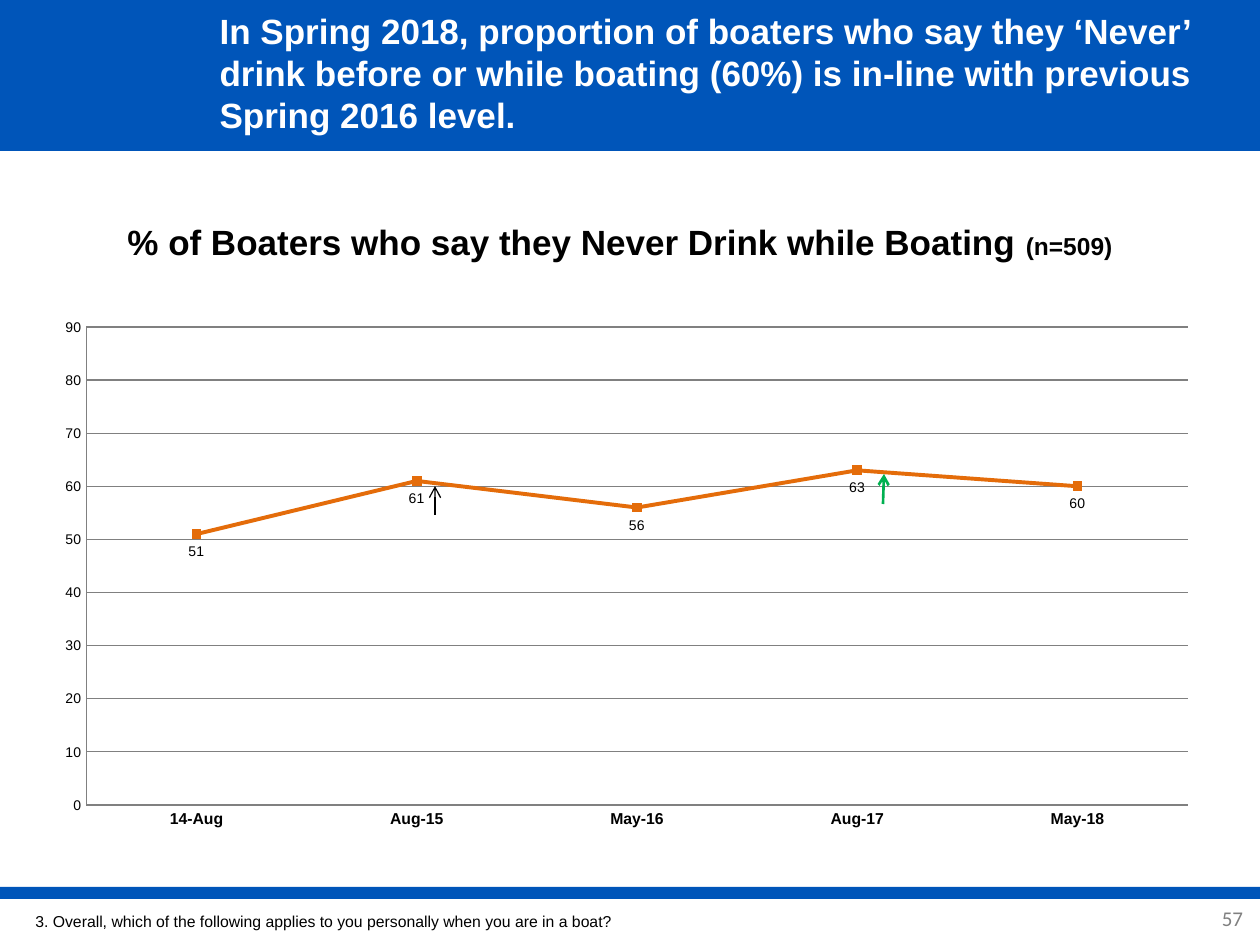
from dataclasses import dataclass

from lxml import etree
from pptx import Presentation
from pptx.chart.data import CategoryChartData
from pptx.dml.color import RGBColor
from pptx.enum.chart import XL_CHART_TYPE, XL_LABEL_POSITION, XL_MARKER_STYLE, XL_TICK_MARK
from pptx.enum.shapes import MSO_CONNECTOR, MSO_SHAPE
from pptx.enum.text import MSO_ANCHOR, MSO_AUTO_SIZE, PP_ALIGN
from pptx.oxml import parse_xml
from pptx.oxml.ns import nsdecls, qn
from pptx.util import Emu, Pt

LEFT, CENTER, RIGHT = PP_ALIGN.LEFT, PP_ALIGN.CENTER, PP_ALIGN.RIGHT
TOP, MIDDLE = MSO_ANCHOR.TOP, MSO_ANCHOR.MIDDLE
NO_TICK = XL_TICK_MARK.NONE
PX_PER_INCH = 126
TITLE_ONLY = 5


@dataclass(frozen=True)
class Theme:
    font: str = "Arial"
    number_font: str = "Calibri"
    blue: str = "0055B9"
    orange: str = "E46C0A"
    green: str = "00B050"
    black: str = "000000"
    white: str = "FFFFFF"
    gray: str = "808080"
    heading: int = 20
    base: int = 14
    number: int = 12
    note: int = 9
    label: int = 8


THEME = Theme()


@dataclass(frozen=True)
class Area:
    left: int
    top: int
    width: int
    height: int

    def emu(self) -> tuple[Emu, ...]:
        return tuple(px(v) for v in (self.left, self.top, self.width, self.height))


@dataclass(frozen=True)
class Span:
    text: str
    size: int
    color: str = THEME.black
    bold: bool = False
    font: str = THEME.font


@dataclass(frozen=True)
class TrendArrow:
    start: tuple[int, int]
    end: tuple[int, int]
    color: str
    width: float


BANDS = [Area(0, 0, 1260, 151), Area(0, 887, 1260, 12)]
CHART_AREA = Area(42, 309, 1169, 530)
PLOT_AREA = Area(86, 327, 1101, 478)
ARROWS = [
    TrendArrow((883, 504), (884, 474), THEME.green, 1.5),
    TrendArrow((435, 515), (435, 486), THEME.black, 0.75),
]
CATEGORIES = ["14-Aug", "Aug-15", "May-16", "Aug-17", "May-18"]
VALUES = [51, 61, 56, 63, 60]


def px(value: int) -> Emu:
    return Emu(round(value * 914400 / PX_PER_INCH))


def rgb(color: str) -> RGBColor:
    return RGBColor.from_string(color)


def style_font(font, size: int, color: str, bold: bool, name: str = THEME.font) -> None:
    font.name, font.size, font.bold = name, Pt(size), bold
    font.color.rgb = rgb(color)


def write_text(box, spans: list[Span], align=LEFT, anchor=TOP) -> None:
    frame = box.text_frame
    frame.word_wrap = True
    frame.auto_size = MSO_AUTO_SIZE.NONE
    frame.vertical_anchor = anchor
    para = frame.paragraphs[0]
    para.alignment = align
    for span in spans:
        run = para.add_run()
        run.text = span.text
        style_font(run.font, span.size, span.color, span.bold, span.font)


def add_text(page, area: Area, spans: list[Span], align=LEFT, anchor=TOP):
    box = page.shapes.add_textbox(*area.emu())
    write_text(box, spans, align, anchor)
    return box


def add_band(page, area: Area) -> None:
    band = page.shapes.add_shape(MSO_SHAPE.RECTANGLE, *area.emu())
    band.shadow.inherit = False
    band.fill.solid()
    band.fill.fore_color.rgb = rgb(THEME.blue)
    band.line.fill.background()


def add_arrow(page, arrow: TrendArrow) -> None:
    points = [px(v) for v in (*arrow.start, *arrow.end)]
    line = page.shapes.add_connector(MSO_CONNECTOR.STRAIGHT, *points)
    line.line.color.rgb = rgb(arrow.color)
    line.line.width = Pt(arrow.width)
    etree.SubElement(line.line._get_or_add_ln(), qn("a:tailEnd")).set("type", "arrow")
    etree.SubElement(line._element.spPr, qn("a:effectLst"))


def place_plot(chart) -> None:
    """Fix the inner plot area as fractions of the chart."""
    fractions = {
        "x": (PLOT_AREA.left - CHART_AREA.left) / CHART_AREA.width,
        "y": (PLOT_AREA.top - CHART_AREA.top) / CHART_AREA.height,
        "w": PLOT_AREA.width / CHART_AREA.width,
        "h": PLOT_AREA.height / CHART_AREA.height,
    }
    parts = '<c:layoutTarget val="inner"/><c:xMode val="edge"/><c:yMode val="edge"/>'
    parts += "".join(f'<c:{key} val="{value:.3f}"/>' for key, value in fractions.items())
    plot_area = chart._chartSpace.chart.plotArea
    for old in plot_area.findall(qn("c:layout")):
        plot_area.remove(old)
    plot_area.insert(0, parse_xml(
        f'<c:layout {nsdecls("c")}><c:manualLayout>{parts}</c:manualLayout></c:layout>'))


def add_line_chart(page) -> None:
    data = CategoryChartData()
    data.categories = CATEGORIES
    data.add_series("Series 1", VALUES)
    chart = page.shapes.add_chart(XL_CHART_TYPE.LINE_MARKERS, *CHART_AREA.emu(), data).chart
    chart.has_legend = chart.has_title = False
    style_font(chart.font, THEME.label, THEME.black, False)
    place_plot(chart)

    # Axes and gridlines
    values, categories = chart.value_axis, chart.category_axis
    values.minimum_scale, values.maximum_scale, values.major_unit = 0, 90, 10
    values.has_major_gridlines = True
    for axis in (values, categories):
        axis.major_tick_mark = axis.minor_tick_mark = NO_TICK
    for line in (values.format.line, categories.format.line, values.major_gridlines.format.line):
        line.color.rgb = rgb(THEME.gray)
        line.width = Pt(0.75)
    style_font(categories.tick_labels.font, THEME.note, THEME.black, True)

    # Series line, markers and labels
    plot = chart.plots[0]
    plot.vary_by_categories = False
    series = plot.series[0]
    series.smooth = False
    series.format.line.color.rgb = rgb(THEME.orange)
    series.format.line.width = Pt(2.25)
    marker = series.marker
    marker.style, marker.size = XL_MARKER_STYLE.SQUARE, 5
    marker.format.fill.solid()
    marker.format.fill.fore_color.rgb = rgb(THEME.orange)
    marker.format.line.color.rgb = rgb(THEME.orange)
    labels = series.data_labels
    labels.show_value = True
    labels.position = XL_LABEL_POSITION.BELOW
    style_font(labels.font, THEME.label, THEME.black, False)


def main() -> None:
    deck = Presentation()
    deck.slide_width, deck.slide_height = px(1260), px(945)
    page = deck.slides.add_slide(deck.slide_layouts[TITLE_ONLY])

    # Bands, with the title brought in front of them
    for area in BANDS:
        add_band(page, area)
    title = page.shapes.title
    page.shapes._spTree.append(title._element)
    title.left, title.top, title.width, title.height = Area(207, 0, 1019, 145).emu()
    write_text(title, [Span(
        "In Spring 2018, proportion of boaters who say they ‘Never’ drink before or while "
        "boating (60%) is in-line with previous Spring 2016 level.",
        THEME.heading, THEME.white, True)], anchor=MIDDLE)

    # Slide number
    number = add_text(page, Area(1179, 893, 79, 50),
                      [Span("57", THEME.number, THEME.gray, font=THEME.number_font)],
                      RIGHT, MIDDLE)
    frame = number.text_frame
    frame.margin_left = frame.margin_top = frame.margin_bottom = px(5)
    frame.margin_right = px(15)

    # Chart with its heading and trend arrows
    add_line_chart(page)
    add_text(page, Area(91, 214, 1058, 68), [
        Span("% of Boaters who say they Never Drink while Boating ", THEME.heading, bold=True),
        Span("(n=509)", THEME.base, bold=True)], CENTER)
    for arrow in ARROWS:
        add_arrow(page, arrow)

    # Survey question
    add_text(page, Area(23, 897, 767, 48), [Span(
        "3. Overall, which of the following applies to you personally when you are in a boat?",
        THEME.note)], anchor=MIDDLE)
    deck.save("out.pptx")


if __name__ == "__main__":
    main()
